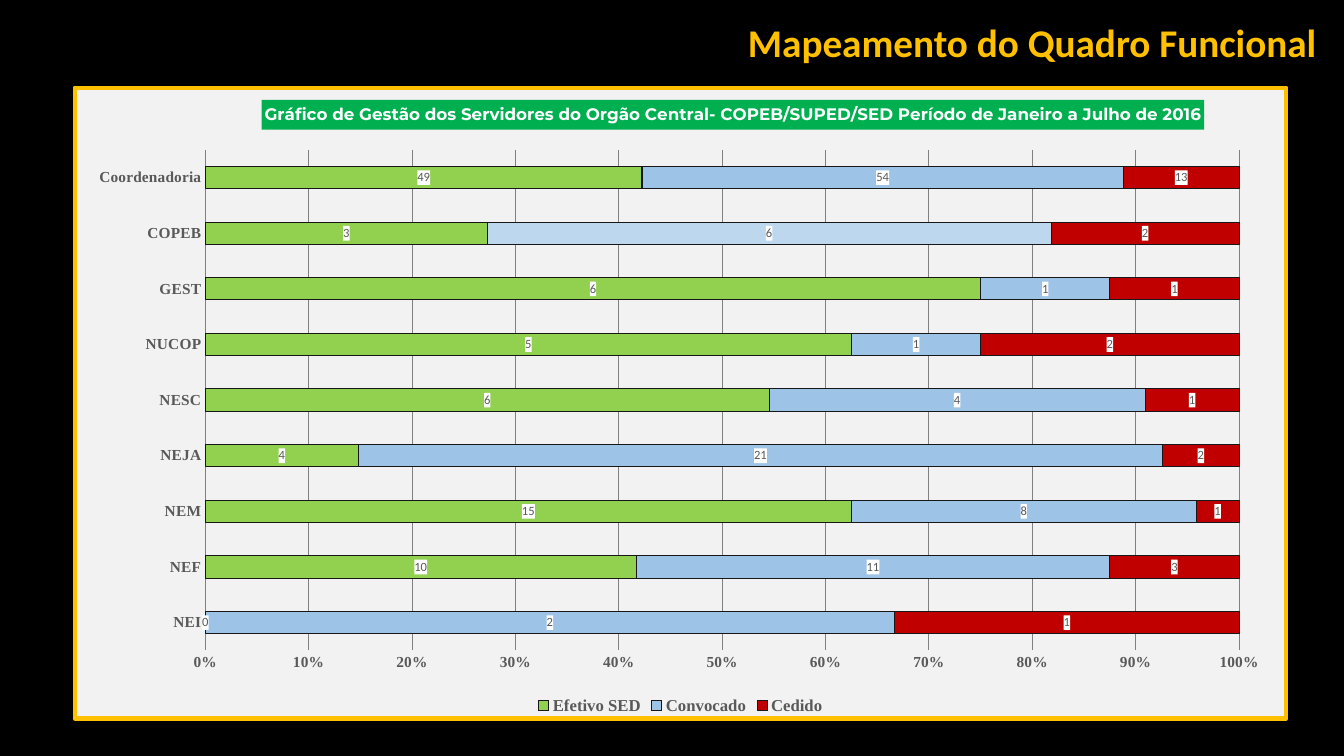
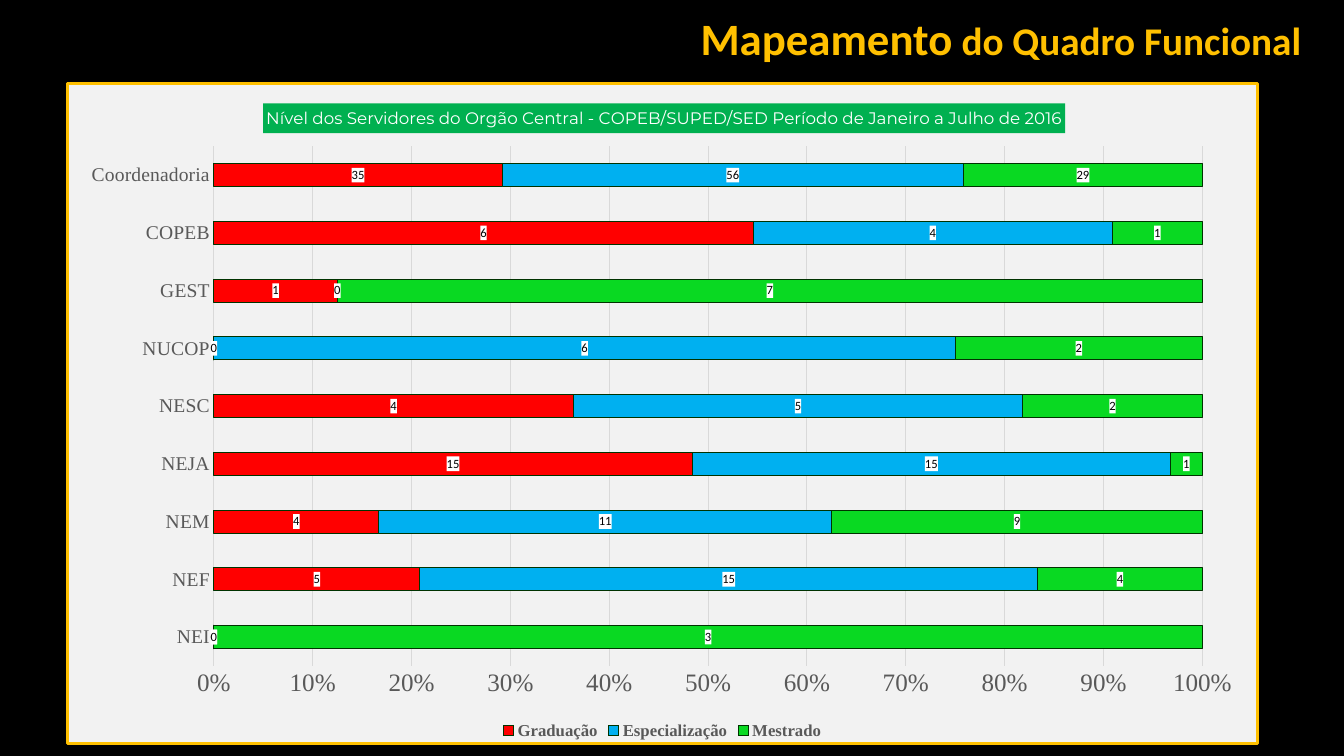
from pptx import Presentation
from pptx.chart.data import CategoryChartData
from pptx.dml.color import RGBColor
from pptx.enum.chart import XL_CHART_TYPE as ChartType, XL_LEGEND_POSITION as LegendPos
from pptx.enum.chart import XL_LABEL_POSITION as LabelPos, XL_TICK_MARK as TickMark
from pptx.enum.text import MSO_AUTO_SIZE as AutoSize
from pptx.oxml import parse_xml
from pptx.oxml.ns import nsdecls, qn
from pptx.util import Inches, Pt

COLORS = {
    "background": "000000", "gold": "FFC000", "panel": "F2F2F2", "banner": "00B050",
    "white": "FFFFFF", "black": "000000", "gray": "595959",
    "dark_grid": "808080", "light_grid": "D9D9D9", "ink": "181717", "forest": "003300",
    "lime": "92D050", "blue": "9DC3E6", "pale_blue": "BDD7EE", "wine": "C00000",
    "red": "FF0000", "sky": "00B0F0", "green": "09D922",
}
SANS, SERIF, BANNER_FONT = "Calibri", "Times New Roman", "Montserrat"

# Content: boxes are left, top, width, height in inches on the slide
TEAMS = ["NEI", "NEF", "NEM", "NEJA", "NESC", "NUCOP", "GEST", "COPEB", "Coordenadoria"]
SLIDES = [
    {
        "heading": [("Mapeamento do Quadro Funcional", 28)],
        "heading_box": (7.32, 0.13, 6, 0.57),
        "banner": "Gráfico de Gestão dos Servidores do Orgão Central- COPEB/SUPED/SED "
                  "Período de Janeiro a Julho de 2016",
        "chart_box": (0.72, 0.85, 12.06, 6.3),
        "plot_box": (2.02, 1.47, 10.29, 5),
        "banner_at": (2.58, 0.97),
        "border": 3, "bold": True, "team_size": 11, "percent_size": 11,
        "grid": "dark_grid", "outline": "ink", "label": "gray",
        "series": [
            ("Efetivo SED", "lime", [0, 10, 15, 4, 6, 5, 6, 3, 49]),
            ("Convocado", "blue", [2, 11, 8, 21, 4, 1, 1, 6, 54]),
            ("Cedido", "wine", [1, 3, 1, 2, 1, 2, 1, 2, 13]),
        ],
        "highlights": [("Convocado", "COPEB", "pale_blue")],
    },
    {
        "heading": [("Mapeamento", 32), (" do Quadro Funcional", 28)],
        "heading_box": (6.85, 0.06, 6.48, 0.64),
        "banner": "Nível dos Servidores do Orgão Central - COPEB/SUPED/SED "
                  "Período de Janeiro a Julho de 2016",
        "chart_box": (0.65, 0.81, 11.84, 6.58),
        "plot_box": (2.11, 1.44, 9.83, 5.18),
        "banner_at": (2.6, 1.01),
        "border": 2.25, "bold": False, "team_size": 14, "percent_size": 18,
        "grid": "light_grid", "outline": "forest", "label": "black",
        "series": [
            ("Graduação", "red", [0, 5, 4, 15, 4, 0, 1, 6, 35]),
            ("Especialização", "sky", [0, 15, 11, 15, 5, 6, 0, 4, 56]),
            ("Mestrado", "green", [3, 4, 9, 1, 2, 2, 7, 1, 29]),
        ],
        "highlights": [],
    },
]


def rgb(name):
    return RGBColor.from_string(COLORS[name])


def style_font(font, size, color, name=SANS, bold=False):
    values = {"size": Pt(size), "name": name, "bold": bold}
    for attribute, value in values.items():
        setattr(font, attribute, value)
    font.color.rgb = rgb(color)


def paint(target, fill, outline):
    target.format.fill.solid()
    target.format.fill.fore_color.rgb = rgb(fill)
    target.format.line.color.rgb = rgb(outline)
    target.format.line.width = Pt(0.75)


# Chart parts that need XML: filled boxes and manual layout
def box_format(fill, border=None, width=0):
    line = "<a:ln><a:noFill/></a:ln>"
    if border:
        line = (f'<a:ln w="{Pt(width)}"><a:solidFill><a:srgbClr val="{COLORS[border]}"/>'
                "</a:solidFill></a:ln>")
    return parse_xml(
        f'<c:spPr {nsdecls("c", "a")}><a:solidFill><a:srgbClr val="{COLORS[fill]}"/>'
        f"</a:solidFill>{line}</c:spPr>")


def set_layout(parent, index, chart_box, part_box, inner=False):
    left, top, width, height = chart_box
    shares = {"x": (part_box[0] - left) / width, "y": (part_box[1] - top) / height}
    if inner:
        shares.update(w=part_box[2] / width, h=part_box[3] / height)
    target = '<c:layoutTarget val="inner"/>' if inner else ""
    modes = '<c:xMode val="edge"/><c:yMode val="edge"/>'
    values = "".join(f'<c:{key} val="{share:.4f}"/>' for key, share in shares.items())
    for old in parent.findall(qn("c:layout")):
        parent.remove(old)
    parent.insert(index, parse_xml(
        f'<c:layout {nsdecls("c")}><c:manualLayout>{target}{modes}{values}'
        "</c:manualLayout></c:layout>"))


def add_heading(slide, content):
    frame = slide.shapes.add_textbox(*map(Inches, content["heading_box"])).text_frame
    frame.word_wrap = True
    frame.auto_size = AutoSize.SHAPE_TO_FIT_TEXT
    for text, size in content["heading"]:
        run = frame.paragraphs[0].add_run()
        run.text = text
        style_font(run.font, size, "gold", bold=True)


def add_banner(chart, content):
    chart.has_title = True
    banner = chart.chart_title
    run = banner.text_frame.paragraphs[0].add_run()
    run.text = content["banner"]
    style_font(run.font, 12, "white", BANNER_FONT, content["bold"])
    set_layout(banner._element, 1, content["chart_box"], content["banner_at"])
    banner._element.append(box_format("banner"))


def style_axes(chart, content):
    teams, percents = chart.category_axis, chart.value_axis
    for axis, size in ((teams, content["team_size"]), (percents, content["percent_size"])):
        axis.major_tick_mark = axis.minor_tick_mark = TickMark.NONE
        axis.format.line.fill.background()
        style_font(axis.tick_labels.font, size, "gray", SERIF, content["bold"])
    percents.major_unit = 0.1
    percents.tick_labels.number_format = "0%"
    percents.tick_labels.number_format_is_linked = False
    percents.has_major_gridlines = True
    grid = percents.major_gridlines.format.line
    grid.color.rgb = rgb(content["grid"])
    grid.width = Pt(0.75)


def style_bars(plot, content):
    plot.gap_width, plot.overlap = 150, 100
    plot.vary_by_categories = False
    for series, (name, color, _) in zip(plot.series, content["series"]):
        paint(series, color, content["outline"])
        series.invert_if_negative = False
        for owner, team, highlight in content["highlights"]:
            if owner == name:
                paint(series.points[TEAMS.index(team)], highlight, content["outline"])
        labels = series.data_labels
        labels.show_value = True
        labels.position = LabelPos.CENTER
        style_font(labels.font, 9, content["label"])
        labels._element.find(qn("c:txPr")).addprevious(box_format("white"))


def add_staff_chart(slide, content):
    data = CategoryChartData()
    data.categories = TEAMS
    for name, _, values in content["series"]:
        data.add_series(name, values)
    chart = slide.shapes.add_chart(
        ChartType.BAR_STACKED_100, *map(Inches, content["chart_box"]), data).chart
    style_font(chart.font, 10, "black")
    add_banner(chart, content)
    style_axes(chart, content)
    style_bars(chart.plots[0], content)
    chart.has_legend = True
    chart.legend.position = LegendPos.BOTTOM
    chart.legend.include_in_layout = False
    style_font(chart.legend.font, 12, "gray", SERIF, True)
    # Panel behind the chart and position of the plot
    body = chart._chartSpace.find(qn("c:chart"))
    body.addnext(box_format("panel", "gold", content["border"]))
    set_layout(body.find(qn("c:plotArea")), 0, content["chart_box"],
               content["plot_box"], inner=True)


def main():
    deck = Presentation()
    deck.slide_width, deck.slide_height = Inches(13.33), Inches(7.5)
    # Shared black background
    backdrop = deck.slide_master.background.fill
    backdrop.solid()
    backdrop.fore_color.rgb = rgb("background")
    for content in SLIDES:
        slide = deck.slides.add_slide(deck.slide_layouts[6])
        add_heading(slide, content)
        add_staff_chart(slide, content)
    deck.save("out.pptx")


if __name__ == "__main__":
    main()
